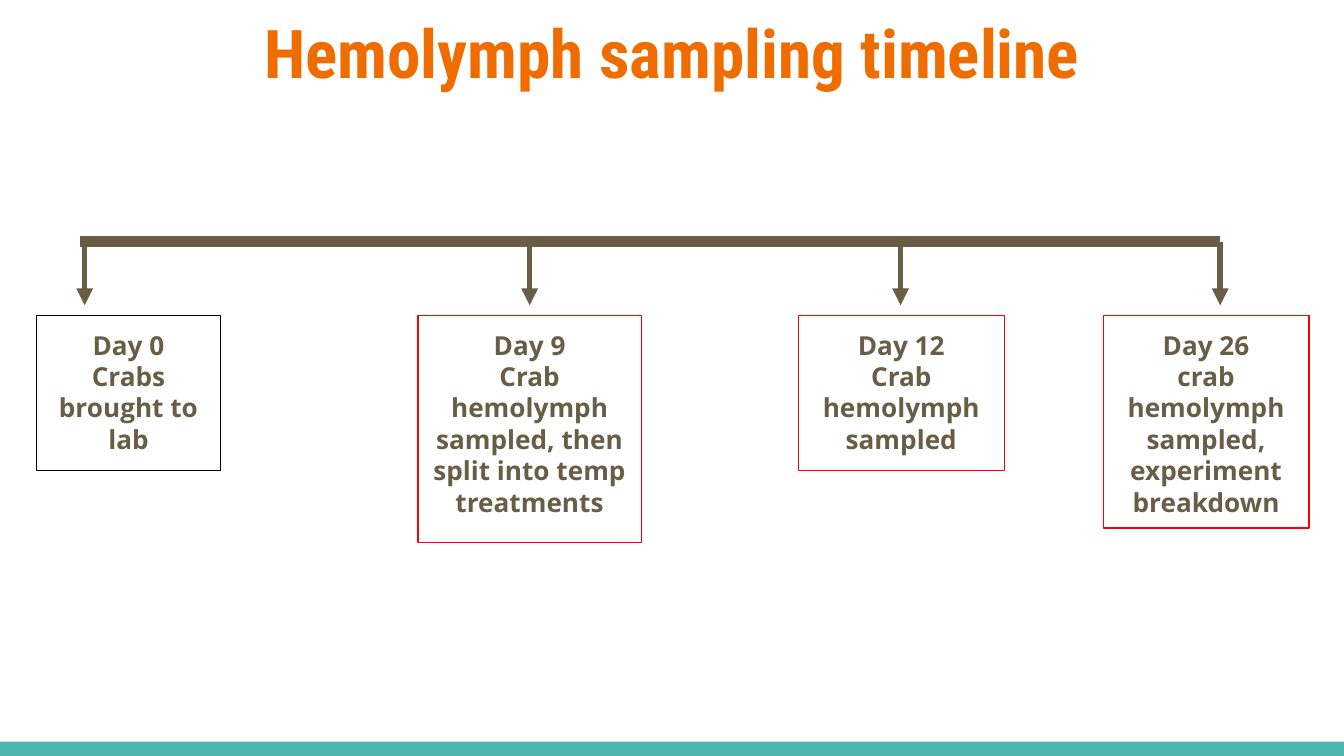
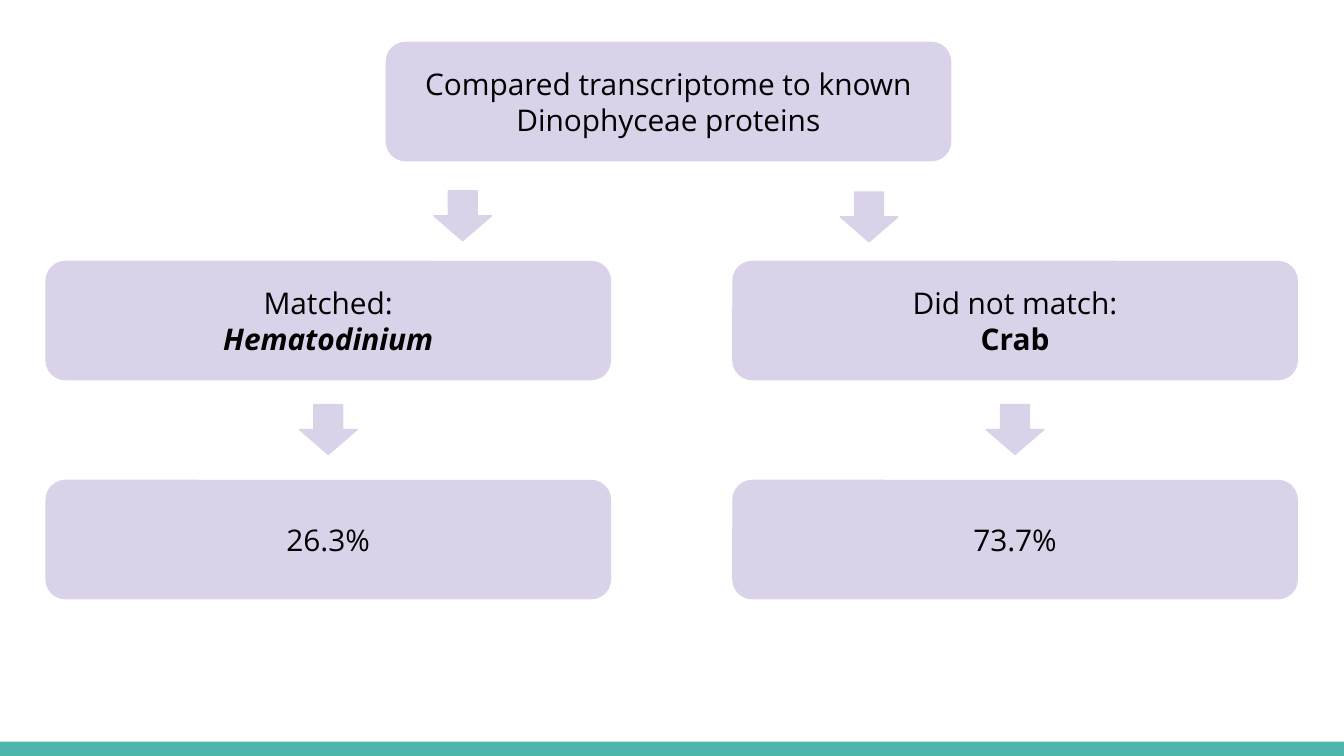
import pptx
import pptx.dml.color
import pptx.enum.shapes
import pptx.enum.text
import pptx.oxml
import pptx.oxml.ns
import pptx.util

Cm = pptx.util.Cm
Pt = pptx.util.Pt
SHAPE = pptx.enum.shapes.MSO_SHAPE
ANCHOR = pptx.enum.text.MSO_ANCHOR

TEAL = "4DB6AC"
ORANGE = "EF6C00"
BROWN = "695D46"
LILAC = "D9D2E9"
BLACK = "000000"
RED = "FF0000"


def paint(fill, color):
    if color is None:
        fill.background()
    else:
        fill.solid()
        fill.fore_color.rgb = pptx.dml.color.RGBColor.from_string(color)


def write(shape, text, size, color, font="Open Sans", bold=False,
          anchor=ANCHOR.TOP, last_bold=False, last_italic=False):
    frame = shape.text_frame
    frame.word_wrap = True
    frame.auto_size = pptx.enum.text.MSO_AUTO_SIZE.NONE
    frame.vertical_anchor = anchor
    frame.margin_left = frame.margin_right = Cm(0.25)
    frame.margin_top = frame.margin_bottom = Cm(0.25)
    lines = text.split("\n")
    for number, line in enumerate(lines):
        para = frame.add_paragraph() if number else frame.paragraphs[0]
        para.alignment = pptx.enum.text.PP_ALIGN.CENTER
        span = para.add_run()
        span.text = line
        is_last = number == len(lines) - 1
        span.font.name = font
        span.font.size = Pt(size)
        span.font.bold = bold or (last_bold and is_last)
        span.font.italic = last_italic and is_last
        paint(span.font.fill, color)


deck = pptx.Presentation()
deck.slide_width = Cm(25.4)
deck.slide_height = Cm(14.29)

page = deck.slides.add_slide(deck.slide_layouts[5])
band = page.shapes.add_shape(SHAPE.RECTANGLE, 0, Cm(14.02), deck.slide_width, Cm(0.27))
band.shadow.inherit = False
paint(band.fill, TEAL)
paint(band.line.fill, None)
band.element.nvSpPr.cNvPr.id = 99
deck.slide_master.shapes.element.insert(2, band.element)

title = page.shapes.title
title.left, title.top, title.width, title.height = Cm(0.86), Cm(-0.03), Cm(23.68), Cm(1.96)
write(title, "Hemolymph sampling timeline", 36, ORANGE, font="Roboto Condensed", bold=True)

axis_top = 4.57
days = [
    (1.6, 0.69, 3.48, 2.92, BLACK, "Day 0\nCrabs brought to lab"),
    (10.01, 7.9, 4.22, 4.29, RED,
     "Day 9\nCrab hemolymph sampled, then split into temp\ntreatments"),
    (17.02, 15.09, 3.89, 2.92, RED, "Day 12\nCrab hemolymph sampled"),
    (23.06, 20.85, 3.89, 4.01, RED,
     "Day 26\ncrab hemolymph sampled, experiment breakdown"),
]
timeline = [(1.52, 23.06, axis_top, 6)] + [(day[0], day[0], 5.77, 3) for day in days]
for start, end, bottom, width in timeline:
    line = page.shapes.add_connector(
        pptx.enum.shapes.MSO_CONNECTOR.STRAIGHT,
        Cm(start), Cm(axis_top), Cm(end), Cm(bottom))
    paint(line.line.fill, BROWN)
    line.line.width = Pt(width)
    if start == end:
        head = pptx.oxml.ns.qn("a:tailEnd")
        line.line.fill._xPr.append(pptx.oxml.parse_xml(
            f'<a:tailEnd {pptx.oxml.ns.nsdecls("a")} type="triangle"/>'))
    line.element.spPr.append(pptx.oxml.parse_xml(
        f'<a:effectLst {pptx.oxml.ns.nsdecls("a")}/>'))

for arrow_x, left, width, height, outline, text in days:
    box = page.shapes.add_shape(SHAPE.RECTANGLE, Cm(left), Cm(5.97), Cm(width), Cm(height))
    box.shadow.inherit = False
    paint(box.fill, None)
    paint(box.line.fill, outline)
    box.line.width = Pt(0.75)
    write(box, text, 14, BROWN, bold=True)

page = deck.slides.add_slide(deck.slide_layouts[6])
box_width, box_height = 10.69, 2.26
arrow_width, arrow_height = 1.09, 0.94
left_column, middle, right_column = 0.86, 7.29, 13.84
first_row, row_step = 0.79, 4.14

steps = [
    (middle, 0, "Compared transcriptome to known Dinophyceae proteins", {}),
    (left_column, 1, "Matched:\nHematodinium", {"last_bold": True, "last_italic": True}),
    (right_column, 1, "Did not match:\nCrab", {"last_bold": True}),
    (left_column, 2, "26.3%", {}),
    (right_column, 2, "73.7%", {}),
]
for left, row, text, style in steps:
    box = page.shapes.add_shape(
        SHAPE.ROUNDED_RECTANGLE, Cm(left), Cm(first_row + row * row_step),
        Cm(box_width), Cm(box_height))
    box.shadow.inherit = False
    paint(box.fill, LILAC)
    paint(box.line.fill, None)
    write(box, text, 16, BLACK, anchor=ANCHOR.MIDDLE, **style)

arrow_indent = (box_width - arrow_width) / 2
arrows = [(8.2, 3.61), (15.88, 3.63)]
arrows += [(column + arrow_indent, 7.65) for column in (left_column, right_column)]
for left, top in arrows:
    arrow = page.shapes.add_shape(
        SHAPE.DOWN_ARROW, Cm(left), Cm(top), Cm(arrow_width), Cm(arrow_height))
    arrow.shadow.inherit = False
    paint(arrow.fill, LILAC)
    paint(arrow.line.fill, LILAC)
    arrow.line.width = Pt(0.75)

deck.save("out.pptx")
